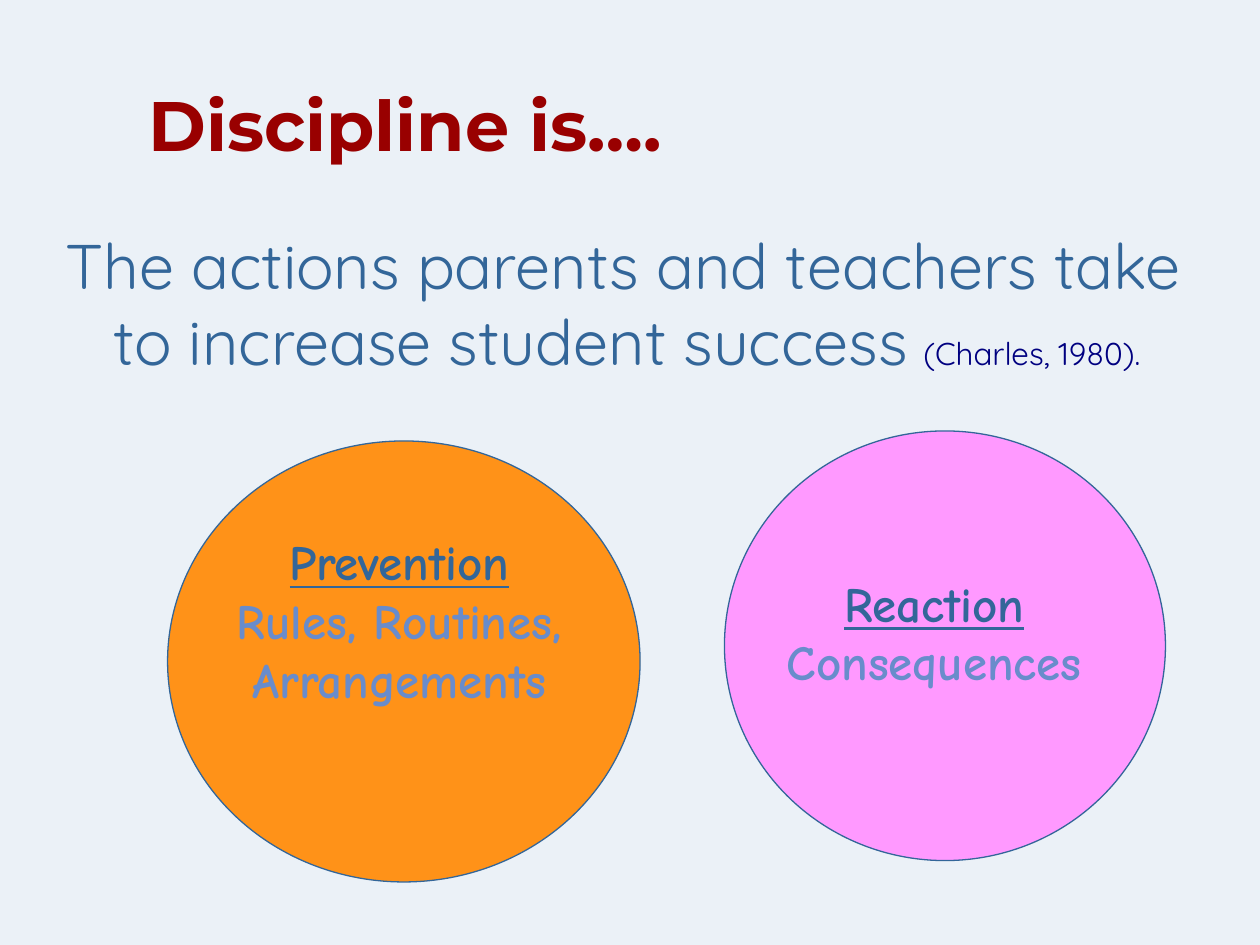
"""Build the slide that defines discipline as prevention and reaction."""
from pptx import Presentation, util as u
from pptx.dml.color import RGBColor
from pptx.enum import shapes, text

HUES = {"back": "EBF1F7", "head": "990000", "blue": "336699", "navy": "000080",
        "pale": "698CCB", "gold": "FF9218", "pink": "FF99FF"}


def hue(name):
    """Return the named colour."""
    return RGBColor.from_string(HUES[name])


def write(para, words, size, face, tint, bold=False, line=False):
    """Add one formatted run to a paragraph."""
    run = para.add_run()
    run.text = words
    font = run.font
    font.size, font.name, font.bold, font.underline = u.Pt(size), face, bold, line
    font.color.rgb = hue(tint)


def frame(slide, box):
    """Add a wrapping text box and return its frame."""
    area = slide.shapes.add_textbox(*map(u.Inches, box)).text_frame
    area.word_wrap = True
    return area


def title(slide, box):
    """Place and format the title."""
    head = slide.shapes.title
    head.left, head.top, head.width, head.height = map(u.Inches, box)
    area = head.text_frame
    area.auto_size = text.MSO_AUTO_SIZE.NONE
    area.vertical_anchor = text.MSO_ANCHOR.MIDDLE
    para = area.paragraphs[0]
    para.alignment = text.PP_ALIGN.LEFT
    para.line_spacing = 0.8
    write(para, "Discipline is….", 40, "Montserrat", "head", bold=True)


def claim(slide, box):
    """Place the definition with its hanging indent and source."""
    para = frame(slide, box).paragraphs[0]
    props = para._p.get_or_add_pPr()
    hang = u.Inches(0.38)
    props.set("marL", str(hang))
    props.set("indent", str(-hang))
    face = "Quicksand"
    write(para, "The actions parents and teachers take to increase student success",
          36, face, "blue")
    write(para, " ", 32, face, "blue")
    write(para, "(Charles, 1980).", 18, face, "navy")


def disc(slide, box, fill):
    """Draw one outlined ellipse."""
    oval = slide.shapes.add_shape(shapes.MSO_SHAPE.OVAL, *map(u.Inches, box))
    oval.shadow.inherit = False
    oval.fill.solid()
    oval.fill.fore_color.rgb = hue(fill)
    oval.line.color.rgb = hue("blue")
    oval.line.width = u.Pt(0.75)


def label(slide, box, name, means):
    """Place an underlined heading with its means below."""
    area = frame(slide, box)
    for para, words, tint, line in (
            (area.paragraphs[0], name, "blue", True),
            (area.add_paragraph(), means, "pale", False)):
        para.alignment = text.PP_ALIGN.CENTER
        write(para, words, 28, "Comic Neue", tint, bold=True, line=line)


def main():
    """Build and save the slide."""
    deck = Presentation()
    deck.slide_width, deck.slide_height = u.Inches(10), u.Inches(7.5)
    slide = deck.slides.add_slide(deck.slide_layouts[5])
    slide.background.fill.solid()
    slide.background.fill.fore_color.rgb = hue("back")
    title(slide, (1.08, 0.42, 8.92, 1.25))
    claim(slide, (0.42, 1.75, 9.25, 4.92))
    disc(slide, (1.33, 3.5, 3.75, 3.5), "gold")
    disc(slide, (5.75, 3.42, 3.5, 3.41), "pink")
    label(slide, (1.67, 4.17, 3, 1.97), "Prevention", "Rules, Routines, Arrangements")
    label(slide, (5.83, 4.5, 3.17, 1.03), "Reaction", "Consequences")
    deck.save("out.pptx")


if __name__ == "__main__":
    main()
